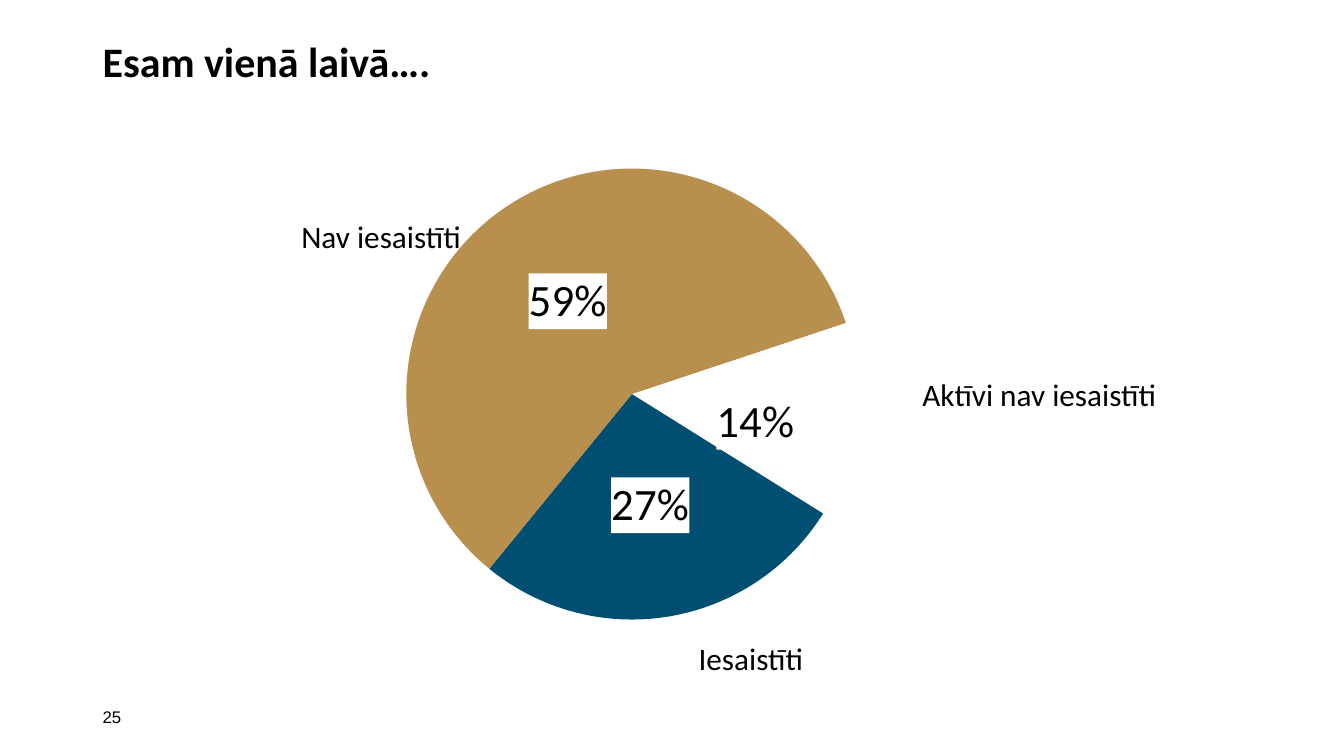
import lxml.etree
import pptx
import pptx.chart.data
import pptx.dml.color
import pptx.enum.chart
import pptx.enum.text
import pptx.oxml
import pptx.oxml.ns
import pptx.util

Inches = pptx.util.Inches
Pt = pptx.util.Pt
BLACK = pptx.dml.color.RGBColor(0x00, 0x00, 0x00)
BLUE = pptx.dml.color.RGBColor(0x00, 0x4F, 0x73)
GOLD = pptx.dml.color.RGBColor(0xB9, 0x8F, 0x4D)
NS = pptx.oxml.ns.nsdecls("c", "a")

deck = pptx.Presentation()
deck.slide_width = Inches(13.33)
deck.slide_height = Inches(7.5)
slide = deck.slides.add_slide(deck.slide_layouts[6])


def add_text(words, left, top, width, height, size, font="Calibri", wrap=True):
    box = slide.shapes.add_textbox(Inches(left), Inches(top), Inches(width), Inches(height))
    box.text_frame.word_wrap = wrap
    paragraph = box.text_frame.paragraphs[0]
    paragraph.text = words
    paragraph.font.size = Pt(size)
    paragraph.font.name = font
    paragraph.font.color.rgb = BLACK
    return box.text_frame


page_number = add_text("25", 0.92, 6.91, 3, 0.4, 12, font="Arial")
page_number.vertical_anchor = pptx.enum.text.MSO_ANCHOR.MIDDLE

engagement = pptx.chart.data.CategoryChartData()
engagement.categories = ["1", "2", "3"]
engagement.add_series("Series 1", (27, 59, 14))
pie = slide.shapes.add_chart(
    pptx.enum.chart.XL_CHART_TYPE.PIE,
    Inches(0.92), Inches(1.53), Inches(11.5), Inches(4.76), engagement,
).chart
pie.has_legend = False
pie.has_title = False
pie.font.name = "Calibri"
pie.font.size = Pt(10)
pie.font.color.rgb = BLACK

plot = pie.plots[0]
plot.vary_by_categories = True
slices = plot.series[0]
for index, colour in enumerate((BLUE, GOLD, None)):
    share = slices.points[index].format
    share.line.fill.background()
    if colour is None:
        share.fill.background()
    else:
        share.fill.solid()
        share.fill.fore_color.rgb = colour

percent = slices.data_labels
percent.show_percentage = True
percent.show_value = False
percent.number_format = "0%"
percent.number_format_is_linked = False
percent.position = pptx.enum.chart.XL_LABEL_POSITION.CENTER
percent.font.name = "Calibri"
percent.font.size = Pt(32)
percent.font.color.rgb = BLACK

labels = slices._element.find(pptx.oxml.ns.qn("c:dLbls"))
labels.find(pptx.oxml.ns.qn("c:numFmt")).addnext(pptx.oxml.parse_xml(
    f'<c:spPr {NS}><a:solidFill><a:srgbClr val="FFFFFF"/></a:solidFill></c:spPr>'))
labels.insert(0, pptx.oxml.parse_xml(
    f'<c:dLbl {NS}><c:idx val="2"/><c:layout><c:manualLayout>'
    '<c:x val="0.01"/><c:y val="0.03"/></c:manualLayout></c:layout>'
    '<c:numFmt formatCode="0%" sourceLinked="0"/><c:spPr><a:noFill/></c:spPr>'
    '<c:txPr><a:bodyPr/><a:p><a:pPr><a:defRPr sz="3200"><a:solidFill>'
    '<a:srgbClr val="000000"/></a:solidFill><a:latin typeface="Calibri"/>'
    '</a:defRPr></a:pPr></a:p></c:txPr><c:dLblPos val="ctr"/>'
    '<c:showLegendKey val="0"/><c:showVal val="0"/><c:showCatName val="0"/>'
    '<c:showSerName val="0"/><c:showPercent val="1"/><c:showBubbleSize val="0"/></c:dLbl>'))

pie_xml = plot._element
for old_angle in pie_xml.findall(pptx.oxml.ns.qn("c:firstSliceAng")):
    pie_xml.remove(old_angle)
pie_xml.append(pptx.oxml.parse_xml(f'<c:firstSliceAng {NS} val="122"/>'))

plot_area = pie_xml.getparent()
for old_layout in plot_area.findall(pptx.oxml.ns.qn("c:layout")):
    plot_area.remove(old_layout)
plot_area.insert(0, pptx.oxml.parse_xml(
    f'<c:layout {NS}><c:manualLayout><c:layoutTarget val="inner"/>'
    '<c:xMode val="edge"/><c:yMode val="edge"/><c:x val="0.27"/><c:y val="0.03"/>'
    '<c:w val="0.39"/><c:h val="0.94"/></c:manualLayout></c:layout>'))

title = add_text("Esam vienā laivā….", 0.92, 0.36, 10.26, 1.03, 30)
title.paragraphs[0].font.bold = True
title.paragraphs[0].line_spacing = 0.9

for group, left, top, width in (
    ("Iesaistīti", 6.83, 6.29, 1.25),
    ("Aktīvi nav iesaistīti", 9.05, 3.67, 2.55),
    ("Nav iesaistīti", 2.89, 2.11, 1.8),
):
    add_text(group, left, top, width, 0.48, 22.3, wrap=False)

deck.save("out.pptx")
